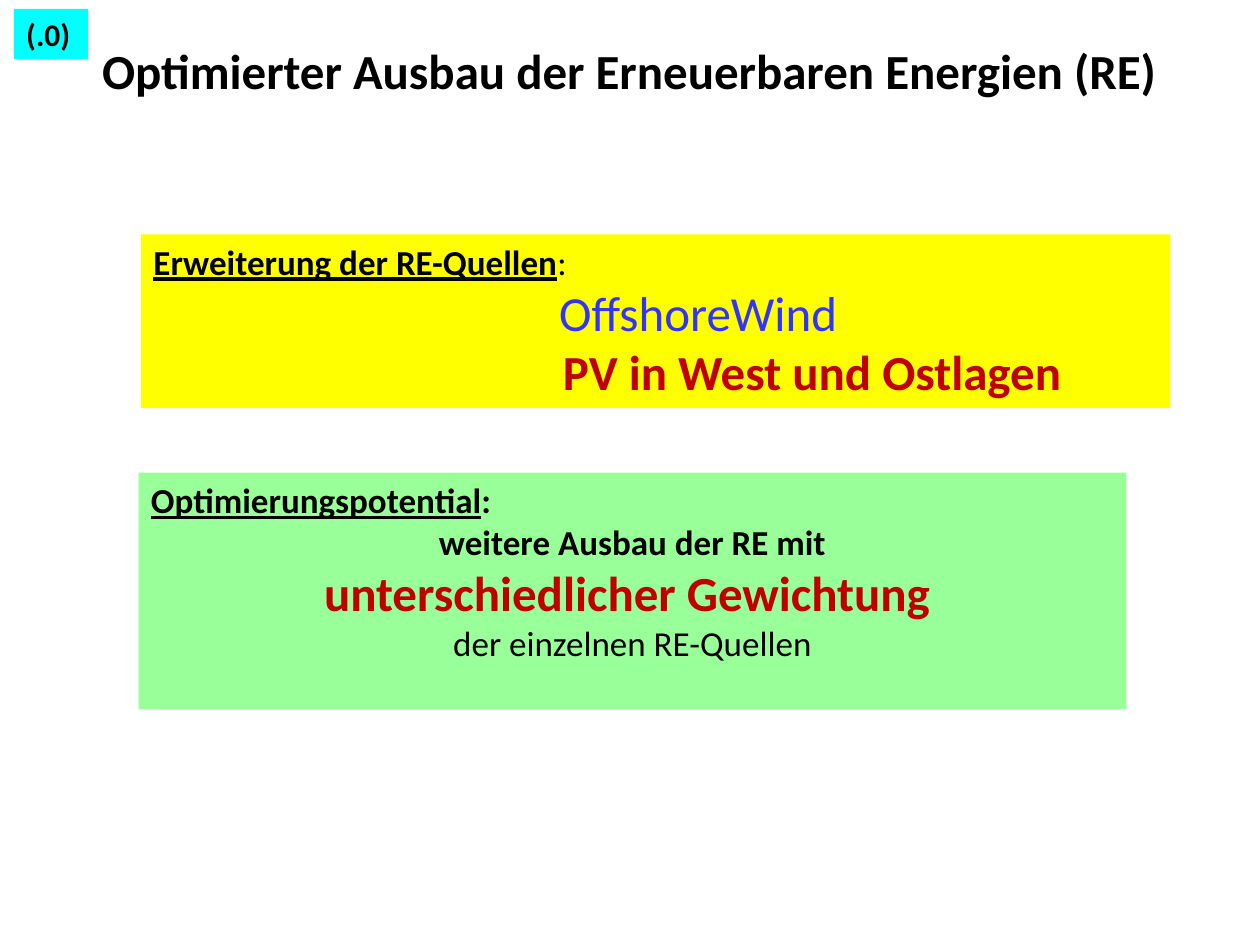
from pptx import Presentation
from pptx.dml.color import RGBColor
from pptx.enum import shapes, text
from pptx.util import Inches, Pt

COLORS = {
    "black": "000000", "blue": "3333FF", "red": "C00000",
    "yellow": "FFFF00", "green": "99FF99", "cyan": "00FFFF",
}
LEFT, CENTER = text.PP_ALIGN.LEFT, text.PP_ALIGN.CENTER


def write(box, lines):
    """Fill a box with lines of (alignment, indent in inches, spans)."""
    frame = box.text_frame
    for name, value in {
        "word_wrap": True,
        "auto_size": text.MSO_AUTO_SIZE.NONE,
        "vertical_anchor": text.MSO_ANCHOR.TOP,
    }.items():
        setattr(frame, name, value)
    for index, (alignment, indent, spans) in enumerate(lines):
        para = frame.add_paragraph() if index else frame.paragraphs[0]
        para.alignment = alignment
        if indent:
            para._p.get_or_add_pPr().set("marL", str(Inches(indent)))
        for wording, size, color, bold, underline in spans:
            span = para.add_run()
            span.text = wording
            for name, value in {
                "name": "Calibri", "size": Pt(size),
                "bold": bold, "underline": underline,
            }.items():
                setattr(span.font, name, value)
            span.font.color.rgb = RGBColor.from_string(COLORS[color])


deck = Presentation()
deck.slide_width, deck.slide_height = Inches(10), Inches(7.5)
page = deck.slides.add_slide(deck.slide_layouts[5])

title = page.shapes.title
title.left, title.top = Inches(0.71), Inches(0.27)
title.width, title.height = Inches(8.62), Inches(0.57)
write(title, [
    (LEFT, 0, [("Optimierter Ausbau der Erneuerbaren Energien (RE)",
                28, "black", True, False)]),
])

panels = [
    ((1.12, 1.86, 8.17, 1.38), "yellow", [
        (LEFT, 0, [("Erweiterung der RE-Quellen", 20, "black", True, True),
                   (":", 20, "black", False, False)]),
        (LEFT, 3.22, [("OffshoreWind", 28, "blue", False, False)]),
        (LEFT, 3.25, [("PV in West und Ostlagen", 28, "red", True, False)]),
    ]),
    ((1.1, 3.75, 7.84, 1.88), "green", [
        (LEFT, 0, [("Optimierungspotential", 20, "black", True, True),
                   (":", 20, "black", True, False)]),
        (CENTER, 0, [("weitere Ausbau der RE mit", 20, "black", True, False)]),
        (CENTER, 0, [("unterschiedlicher Gewichtung ", 28, "red", True, False)]),
        (CENTER, 0, [("der einzelnen RE-Quellen", 20, "black", False, False)]),
    ]),
    ((0.11, 0.07, 0.59, 0.4), "cyan", [
        (LEFT, 0, [("(.0)", 18, "black", True, False)]),
    ]),
]
for place, fill, lines in panels:
    box = page.shapes.add_shape(
        shapes.MSO_SHAPE.RECTANGLE, *(Inches(length) for length in place))
    box.shadow.inherit = False
    box.fill.solid()
    box.fill.fore_color.rgb = RGBColor.from_string(COLORS[fill])
    box.line.fill.background()
    write(box, lines)

deck.save("out.pptx")
